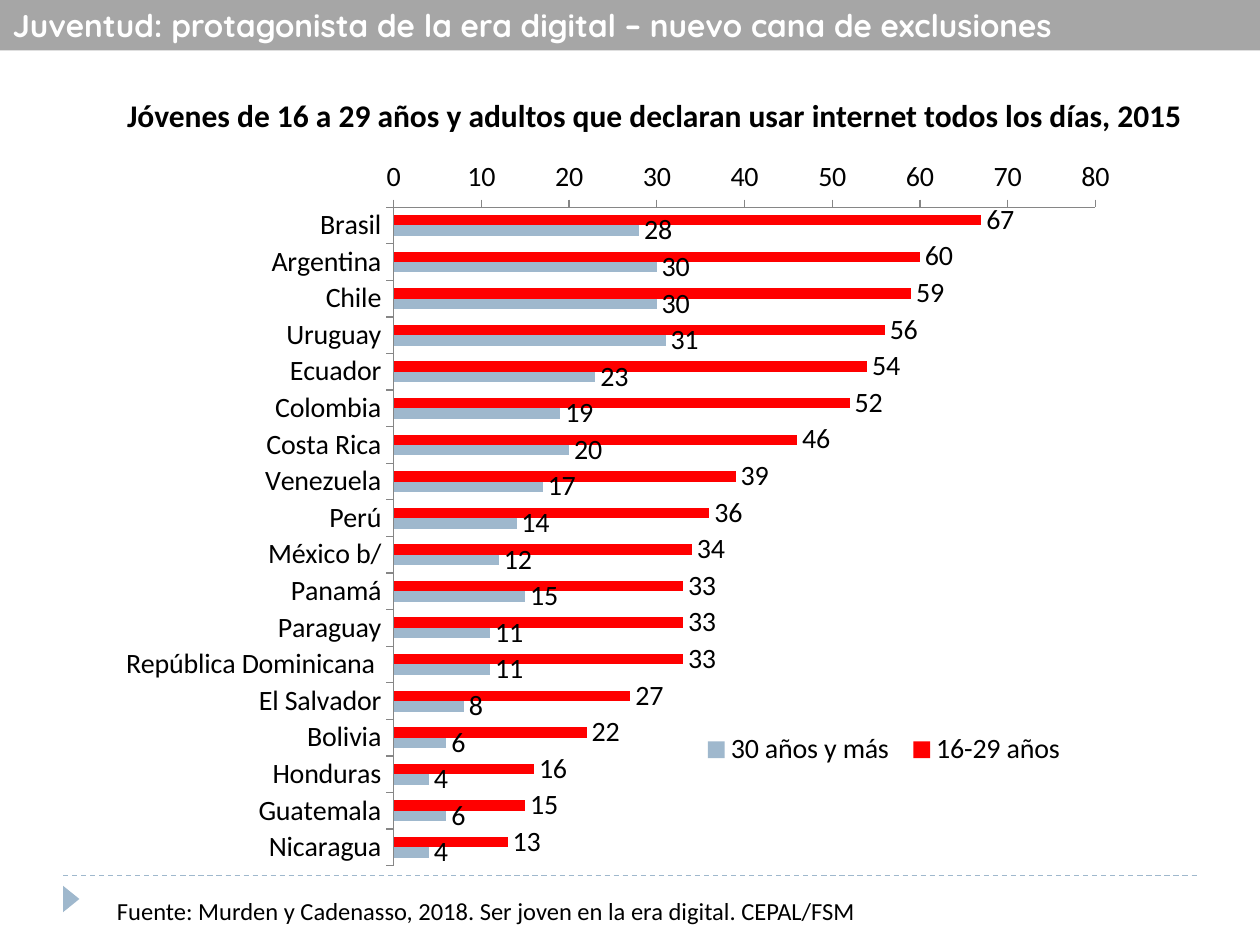
"""Builds a slide on daily internet use by age group in Latin America."""
from dataclasses import dataclass

from pptx import Presentation
from pptx import util as u
from pptx.chart import data as cd
from pptx.dml import color as col
from pptx.enum import chart as ch, dml, shapes, text
from pptx.oxml import parse_xml
from pptx.oxml.ns import nsdecls

RGB = col.RGBColor.from_string


@dataclass(frozen=True)
class Theme:
    """Holds the colours, fonts and type sizes."""
    ink: col.RGBColor = RGB("000000")
    white: col.RGBColor = RGB("FFFFFF")
    band: col.RGBColor = RGB("A6A6A6")
    axis: col.RGBColor = RGB("868686")
    young: col.RGBColor = RGB("FF0000")
    old: col.RGBColor = RGB("9FB8CD")
    head: str = "Quicksand"
    body: str = "Calibri"
    big: int = 18
    mid: int = 16
    small: int = 14


T = Theme()

USE = [
    ("Brasil", 67, 28), ("Argentina", 60, 30), ("Chile", 59, 30),
    ("Uruguay", 56, 31), ("Ecuador", 54, 23), ("Colombia", 52, 19),
    ("Costa Rica", 46, 20), ("Venezuela", 39, 17), ("Perú", 36, 14),
    ("México b/", 34, 12), ("Panamá", 33, 15), ("Paraguay", 33, 11),
    ("República Dominicana ", 33, 11), ("El Salvador", 27, 8),
    ("Bolivia", 22, 6), ("Honduras", 16, 4), ("Guatemala", 15, 6),
    ("Nicaragua", 13, 4),
]


def box(*nums):
    """Turns numbers into lengths in inches."""
    return [u.Inches(n) for n in nums]


def style(font, face, size, tint, bold=False):
    """Sets face, size, colour and weight of a font."""
    font.name, font.size, font.bold = face, u.Pt(size), bold
    font.color.rgb = tint


def add_head(slide, words):
    """Makes the title a grey band across the top."""
    head = slide.shapes.title
    head.left, head.top, head.width, head.height = box(0, 0, 10, 0.4)
    head.fill.solid()
    head.fill.fore_color.rgb = T.band
    frame = head.text_frame
    frame.text = words
    frame.auto_size = text.MSO_AUTO_SIZE.NONE
    frame.vertical_anchor = text.MSO_ANCHOR.MIDDLE
    para = frame.paragraphs[0]
    para.alignment = text.PP_ALIGN.LEFT
    style(para.font, T.head, T.big, T.white, True)


def add_text(slide, place, words, size, bold=False):
    """Adds a wrapped line of body text."""
    frame = slide.shapes.add_textbox(*box(*place)).text_frame
    frame.word_wrap = True
    frame.text = words
    style(frame.paragraphs[0].font, T.body, size, T.ink, bold)


def add_rule(slide):
    """Adds the dashed foot rule and its marker."""
    line = slide.shapes.add_connector(
        shapes.MSO_CONNECTOR.STRAIGHT, *box(0.5, 6.95, 9.5, 6.95))
    line.line.color.rgb = T.old
    line.line.width = u.Pt(0.75)
    line.line.dash_style = dml.MSO_LINE.DASH
    line._element.spPr.append(parse_xml(f"<a:effectLst {nsdecls('a')}/>"))
    mark = slide.shapes.add_shape(
        shapes.MSO_SHAPE.ISOSCELES_TRIANGLE, *box(0.46, 7.07, 0.21, 0.13))
    mark.rotation = 90
    mark.shadow.inherit = False
    mark.fill.solid()
    mark.fill.fore_color.rgb = T.old
    mark.line.fill.background()


def set_place(node, index, place, inner=False):
    """Gives a chart part a manual layout in shares of the chart."""
    for past in node.xpath("./c:layout"):
        node.remove(past)
    target = '<c:layoutTarget val="inner"/>' if inner else ""
    modes = "".join(f'<c:{k}Mode val="edge"/>' for k in "xy")
    sizes = "".join(f'<c:{k} val="{v}"/>' for k, v in zip("xywh", place))
    node.insert(index, parse_xml(
        f"<c:layout {nsdecls('c')}><c:manualLayout>{target}{modes}{sizes}"
        "</c:manualLayout></c:layout>"))


def set_axis(axis):
    """Gives an axis a grey line, outer ticks and no grid."""
    axis.has_major_gridlines = False
    axis.major_tick_mark = ch.XL_TICK_MARK.OUTSIDE
    axis.minor_tick_mark = ch.XL_TICK_MARK.NONE
    axis.format.line.color.rgb = T.axis
    axis.format.line.width = u.Pt(0.75)


def set_bars(plot):
    """Colours the bars and shows their values."""
    plot.gap_width, plot.overlap = 150, 0
    plot.vary_by_categories = False
    for row, tint in zip(plot.series, (T.young, T.old)):
        row.format.fill.solid()
        row.format.fill.fore_color.rgb = tint
        row.invert_if_negative = False
        tags = row.data_labels
        tags.show_value = True
        tags.number_format, tags.number_format_is_linked = "0", False
        tags.position = ch.XL_LABEL_POSITION.OUTSIDE_END


def add_bars(slide):
    """Adds the bar chart of daily use by country."""
    names, young, old = zip(*USE)
    data = cd.CategoryChartData(number_format="0")
    data.categories = names
    data.add_series("16-29 años", young)
    data.add_series("30 años y más", old)
    chart = slide.shapes.add_chart(
        ch.XL_CHART_TYPE.BAR_CLUSTERED, *box(0.75, 1.11, 8.19, 5.94),
        data).chart
    chart.has_title = False
    style(chart.font, T.body, T.mid, T.ink)
    set_bars(chart.plots[0])
    cats, vals = chart.category_axis, chart.value_axis
    set_axis(cats)
    set_axis(vals)
    cats.reverse_order = True
    vals.minimum_scale, vals.maximum_scale, vals.major_unit = 0, 80, 10
    vals.tick_labels.number_format = "0"
    vals.tick_labels.number_format_is_linked = False
    chart.has_legend = True
    key = chart.legend
    key.position = ch.XL_LEGEND_POSITION.BOTTOM
    key.include_in_layout = False
    set_place(key._element, 1, (0.58, 0.78, 0.37, 0.07))
    area = chart.element.xpath("//c:plotArea")[0]
    set_place(area, 0, (0.29, 0.09, 0.68, 0.88), inner=True)


def main():
    """Builds and saves the slide."""
    deck = Presentation()
    deck.slide_width, deck.slide_height = box(10, 7.5)
    slide = deck.slides.add_slide(deck.slide_layouts[5])
    add_rule(slide)
    add_head(slide, "Juventud: protagonista de la era digital – "
                    "nuevo cana de exclusiones")
    add_text(slide, (0.91, 0.71, 8.82, 0.4),
             "Jóvenes de 16 a 29 años y adultos que declaran usar internet "
             "todos los días, 2015", T.big, True)
    add_bars(slide)
    add_text(slide, (0.83, 7.06, 8.98, 0.34),
             "Fuente: Murden y Cadenasso, 2018. Ser joven en la era digital. "
             "CEPAL/FSM", T.small)
    deck.save("out.pptx")


if __name__ == "__main__":
    main()
